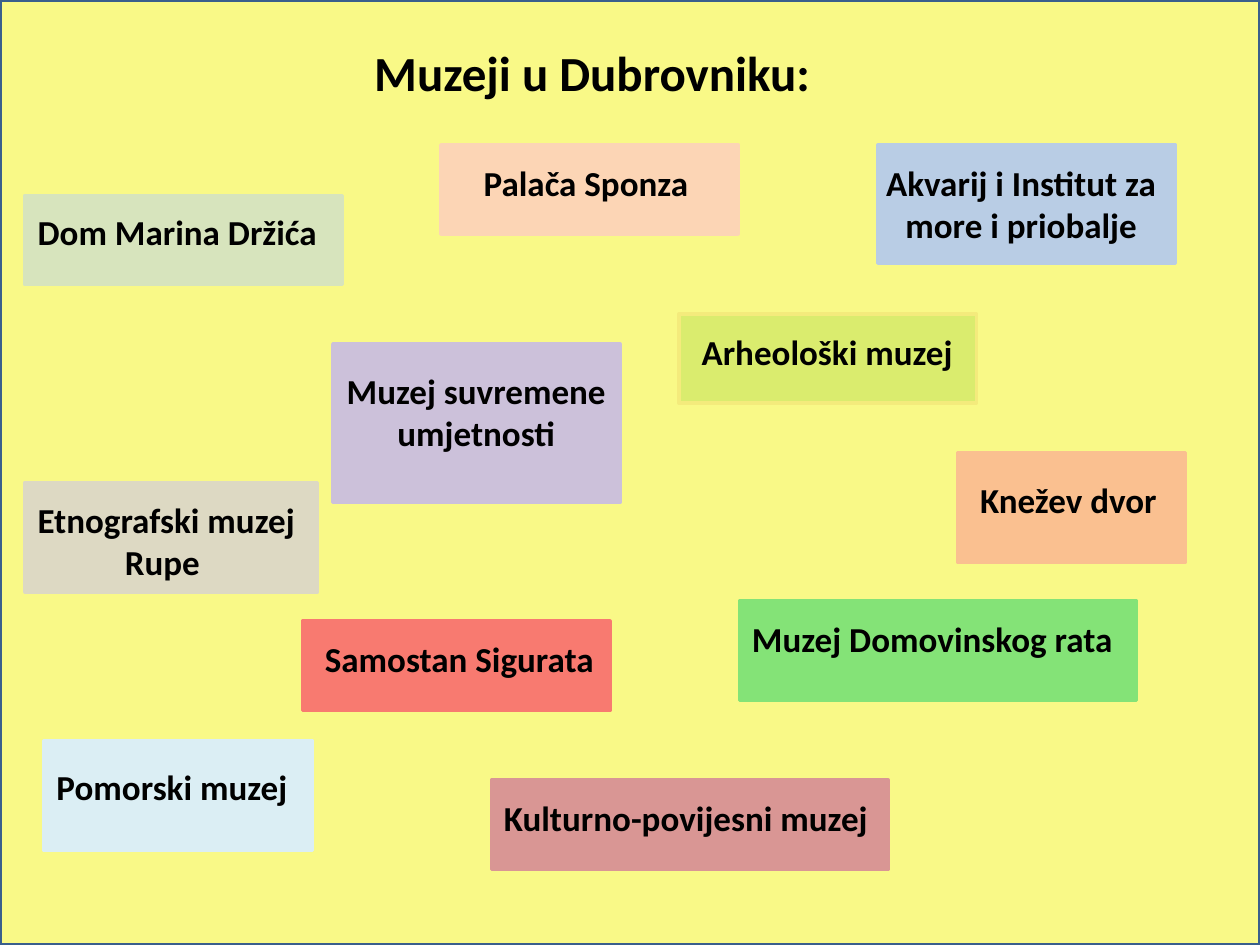
from dataclasses import dataclass

from pptx import Presentation
from pptx.dml.color import RGBColor
from pptx.enum.shapes import MSO_SHAPE
from pptx.enum.text import MSO_ANCHOR, MSO_AUTO_SIZE, PP_ALIGN
from pptx.util import Inches, Pt

RECT = MSO_SHAPE.RECTANGLE
LEFT, CENTER = PP_ALIGN.LEFT, PP_ALIGN.CENTER
TOP = MSO_ANCHOR.TOP
GROW = MSO_AUTO_SIZE.SHAPE_TO_FIT_TEXT
TITLE_ONLY = 5


@dataclass(frozen=True)
class Theme:
    font: str = "Calibri"
    title_size: int = 28
    label_size: int = 20
    line_width: int = 2
    text: str = "000000"
    page: str = "F9F987"
    frame: str = "3A5F8C"
    rose: str = "D99694"
    ice: str = "DBEEF4"
    orange: str = "FAC090"
    green: str = "84E377"
    red: str = "F87A70"
    sand: str = "DDD9C3"
    violet: str = "CCC1DA"
    lime: str = "DAEC6E"
    lime_edge: str = "F4EB7C"
    blue: str = "B9CDE5"
    peach: str = "FCD5B5"
    sage: str = "D7E4BD"


T = Theme()

# Card box, fill, label box, label lines, options
MUSEUMS = [
    ((3.9, 6.19, 3.15, 0.71), T.rose, (3.9, 6.27, 3.78, 0.44),
     ["Kulturno-povijesni muzej"], {}),
    ((0.35, 5.88, 2.13, 0.87), T.ice, (0.35, 6.03, 2.36, 0.44),
     ["Pomorski muzej"], {}),
    ((7.6, 3.59, 1.81, 0.87), T.orange, (7.68, 3.75, 2.09, 0.44),
     ["Knežev dvor"], {}),
    ((5.87, 4.77, 3.15, 0.79), T.green, (5.87, 4.85, 3.54, 0.44),
     ["Muzej Domovinskog rata"], {}),
    ((2.4, 4.93, 2.44, 0.71), T.red, (2.48, 5.01, 2.83, 0.44),
     ["Samostan Sigurata"], {}),
    ((0.2, 3.83, 2.32, 0.87), T.sand, (0.2, 3.91, 2.24, 0.77),
     ["Etnografski muzej", "Rupe "], {"align": CENTER}),
    ((2.64, 2.73, 2.28, 1.26), T.violet, (2.4, 2.88, 2.76, 0.77),
     ["Muzej suvremene umjetnosti"], {"align": CENTER}),
    ((5.39, 2.49, 2.36, 0.71), T.lime, (5.47, 2.57, 2.76, 0.44),
     ["Arheološki muzej"], {"edge": T.lime_edge}),
    ((6.97, 1.15, 2.36, 0.94), T.blue, (6.65, 1.23, 2.91, 0.77),
     ["Akvarij i Institut za more i priobalje"], {"align": CENTER}),
    ((3.5, 1.15, 2.36, 0.71), T.peach, (3.74, 1.23, 2.13, 0.44),
     ["Palača Sponza"], {}),
    ((0.2, 1.55, 2.52, 0.71), T.sage, (0.2, 1.62, 2.91, 0.44),
     ["Dom Marina Držića"], {}),
]


def inches(box):
    return [Inches(v) for v in box]


def write(tf, lines, size=T.label_size, align=LEFT):
    tf.word_wrap = True
    tf.auto_size = GROW
    tf.vertical_anchor = TOP
    for i, line in enumerate(lines):
        p = tf.paragraphs[0] if i == 0 else tf.add_paragraph()
        p.alignment = align
        r = p.add_run()
        r.text = line
        r.font.name = T.font
        r.font.size = Pt(size)
        r.font.bold = True
        r.font.color.rgb = RGBColor.from_string(T.text)


def add_rect(s, box, fill, edge):
    sp = s.shapes.add_shape(RECT, *inches(box))
    sp.shadow.inherit = False
    sp.fill.solid()
    sp.fill.fore_color.rgb = RGBColor.from_string(fill)
    sp.line.color.rgb = RGBColor.from_string(edge)
    sp.line.width = Pt(T.line_width)
    return sp


def add_backdrop(s, box):
    sp = add_rect(s, box, T.page, T.frame)
    # The backdrop goes behind the title
    s.shapes.title.element.addprevious(sp.element)


def add_title(s, box, text):
    sp = s.shapes.title
    sp.left, sp.top, sp.width, sp.height = inches(box)
    write(sp.text_frame, [text], size=T.title_size)


def add_label(s, box, lines, align=LEFT):
    sp = s.shapes.add_textbox(*inches(box))
    write(sp.text_frame, lines, align=align)


def main():
    prs = Presentation()
    prs.slide_width, prs.slide_height = Inches(10), Inches(7.5)
    s = prs.slides.add_slide(prs.slide_layouts[TITLE_ONLY])

    # Page and heading
    add_backdrop(s, (0, 0, 10, 7.5))
    add_title(s, (2.87, 0.29, 3.94, 0.57), "Muzeji u Dubrovniku:")

    # Cards first, so that every label lies above them
    for card, fill, _, _, options in MUSEUMS:
        add_rect(s, card, fill, options.get("edge", fill))
    for _, _, box, lines, options in MUSEUMS:
        add_label(s, box, lines, options.get("align", LEFT))

    prs.save("out.pptx")


if __name__ == "__main__":
    main()
